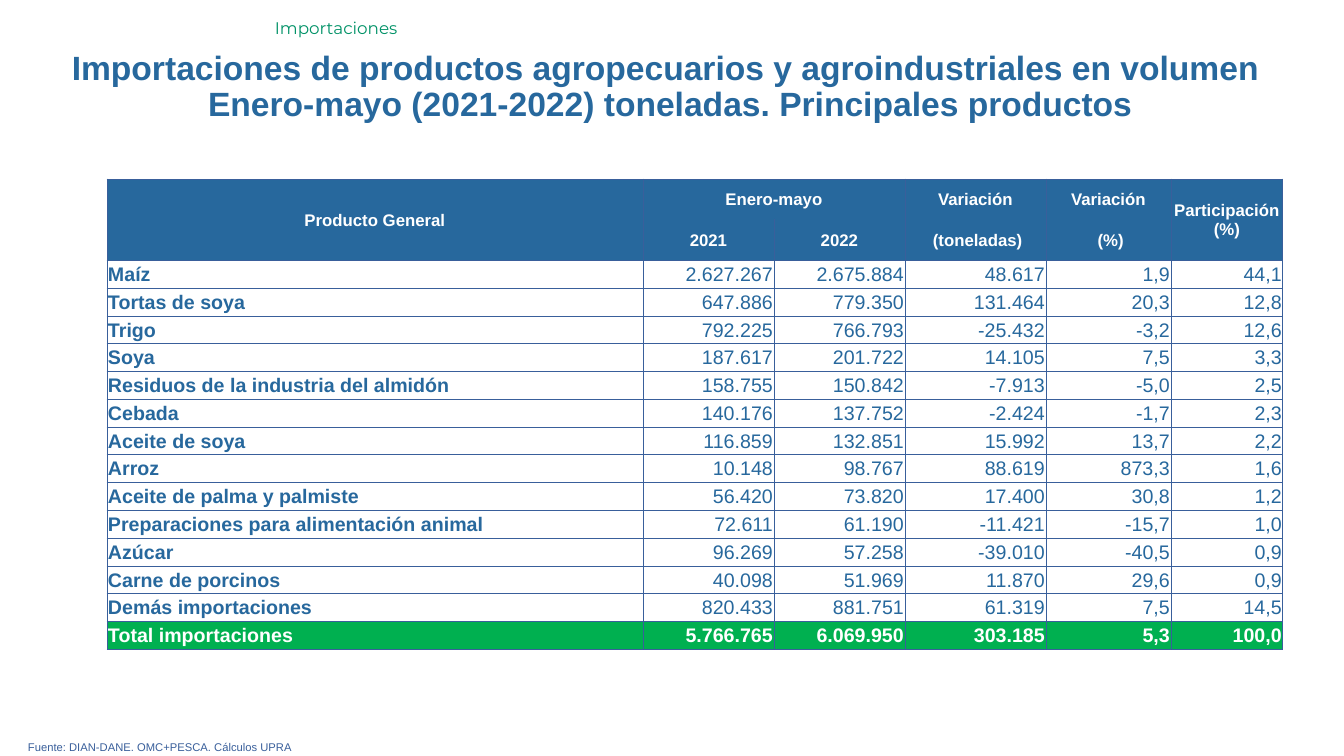
from lxml import etree
from pptx import Presentation
from pptx.dml.color import RGBColor
from pptx.enum.text import MSO_ANCHOR, PP_ALIGN
from pptx.oxml.ns import qn
from pptx.util import Pt

LEFT, CENTER, RIGHT = PP_ALIGN.LEFT, PP_ALIGN.CENTER, PP_ALIGN.RIGHT
TOP, MIDDLE = MSO_ANCHOR.TOP, MSO_ANCHOR.MIDDLE
EMU_PER_PX = 914400 / 100.8
COLORS = {
    "blue": "27689D",
    "line": "395F9B",
    "teal": "009267",
    "green": "00B050",
    "white": "FFFFFF",
}
COLUMN_WIDTHS = [536, 131, 131, 141, 125, 112]
HEADER_HEIGHTS = [40, 41]
BODY_HEIGHT = 389
HEADERS = [
    ("Producto General", "Enero-mayo", "", "Variación", "Variación", "Participación (%)"),
    ("", "2021", "2022", " (toneladas)", " (%)", ""),
]
MERGES = [((0, 0), (1, 0)), ((0, 1), (0, 2)), ((0, 5), (1, 5))]
PRODUCTS = [
    ("Maíz", "2.627.267", "2.675.884", "48.617", "1,9", "44,1"),
    ("Tortas de soya", "647.886", "779.350", "131.464", "20,3", "12,8"),
    ("Trigo", "792.225", "766.793", "-25.432", "-3,2", "12,6"),
    ("Soya", "187.617", "201.722", "14.105", "7,5", "3,3"),
    ("Residuos de la industria del almidón", "158.755", "150.842", "-7.913", "-5,0", "2,5"),
    ("Cebada", "140.176", "137.752", "-2.424", "-1,7", "2,3"),
    ("Aceite de soya", "116.859", "132.851", "15.992", "13,7", "2,2"),
    ("Arroz", "10.148", "98.767", "88.619", "873,3", "1,6"),
    ("Aceite de palma y palmiste", "56.420", "73.820", "17.400", "30,8", "1,2"),
    ("Preparaciones para alimentación animal", "72.611", "61.190", "-11.421", "-15,7", "1,0"),
    ("Azúcar", "96.269", "57.258", "-39.010", "-40,5", "0,9"),
    ("Carne de porcinos", "40.098", "51.969", "11.870", "29,6", "0,9"),
    ("Demás importaciones", "820.433", "881.751", "61.319", "7,5", "14,5"),
    ("Total importaciones", "5.766.765", "6.069.950", "303.185", "5,3", "100,0"),
]


def emu(px):
    return round(px * EMU_PER_PX)


class SlideBuilder:
    def __init__(self, deck, font):
        self.font = font
        self.page = deck.slides.add_slide(deck.slide_layouts[6])

    def add_lines(self, para, lines, size, color, bold=False, font=None, align=LEFT):
        para.alignment = align
        for index, line in enumerate(lines):
            if index:
                para.add_line_break()
            span = para.add_run()
            span.text = line
            span.font.name = font or self.font
            span.font.size = Pt(size)
            span.font.bold = bold
            span.font.color.rgb = RGBColor.from_string(COLORS[color])

    def text(self, left, top, width, height, lines, size, color,
             anchor=TOP, spacing=None, **style):
        box = self.page.shapes.add_textbox(*map(emu, (left, top, width, height)))
        frame = box.text_frame
        frame.word_wrap = True
        frame.vertical_anchor = anchor
        para = frame.paragraphs[0]
        para.line_spacing = spacing
        self.add_lines(para, lines, size, color, **style)

    def borders(self, cell, hidden):
        properties = cell._tc.get_or_add_tcPr()
        for index, side in enumerate("LRTB"):
            line = etree.Element(qn(f"a:ln{side}"), w=str(Pt(0.5)))
            if side in hidden:
                etree.SubElement(line, qn("a:noFill"))
            else:
                fill = etree.SubElement(line, qn("a:solidFill"))
                etree.SubElement(fill, qn("a:srgbClr"), val=COLORS["line"])
            properties.insert(index, line)

    def cell(self, cell, words, size, color, fill, bold, align, hidden):
        cell.margin_left = cell.margin_right = cell.margin_top = emu(1)
        cell.margin_bottom = 0
        cell.vertical_anchor = MIDDLE
        if fill:
            cell.fill.solid()
            cell.fill.fore_color.rgb = RGBColor.from_string(COLORS[fill])
        else:
            cell.fill.background()
        self.borders(cell, hidden)
        if words:
            self.add_lines(cell.text_frame.paragraphs[0], [words], size, color,
                           bold=bold, align=align)

    def imports_table(self, left, top):
        rows = HEADERS + PRODUCTS
        header_count, last = len(HEADERS), len(rows) - 1
        table = self.page.shapes.add_table(
            len(rows), len(COLUMN_WIDTHS), emu(left), emu(top),
            emu(sum(COLUMN_WIDTHS)), emu(sum(HEADER_HEIGHTS) + BODY_HEIGHT)).table
        table.first_row = table.horz_banding = False
        for column, width in zip(table.columns, COLUMN_WIDTHS):
            column.width = emu(width)
        heights = HEADER_HEIGHTS + [BODY_HEIGHT / len(PRODUCTS)] * len(PRODUCTS)
        for row, height in zip(table.rows, heights):
            row.height = emu(height)
        for start, end in MERGES:
            table.cell(*start).merge(table.cell(*end))
        for row, values in enumerate(rows):
            for column, words in enumerate(values):
                hidden = {0: "B", 1: "T"}.get(row, "")
                if row == 0:
                    hidden += {1: "R", 2: "L"}.get(column, "")
                if row < header_count:
                    style = (12, "white", "blue", True, CENTER)
                else:
                    total = row == last
                    style = (14, "white" if total else "blue",
                             "green" if total else None,
                             total or column == 0, RIGHT if column else LEFT)
                self.cell(table.cell(row, column), words, *style, hidden)


def main():
    deck = Presentation()
    deck.slide_width, deck.slide_height = emu(1344), emu(756)
    slide = SlideBuilder(deck, "Arial")
    slide.text(265, 13, 1079, 30, ["Importaciones"], 12, "teal", font="Montserrat")
    slide.imports_table(107, 179)
    slide.text(15, 49, 1301, 77, [
        "Importaciones de productos agropecuarios y agroindustriales en volumen",
        " Enero-mayo (2021-2022) toneladas. Principales productos",
    ], 24, "blue", anchor=MIDDLE, spacing=0.9, bold=True, align=CENTER)
    slide.text(18, 735, 1301, 21, ["Fuente: DIAN-DANE. OMC+PESCA. Cálculos UPRA"], 8, "line")
    deck.save("out.pptx")


if __name__ == "__main__":
    main()
